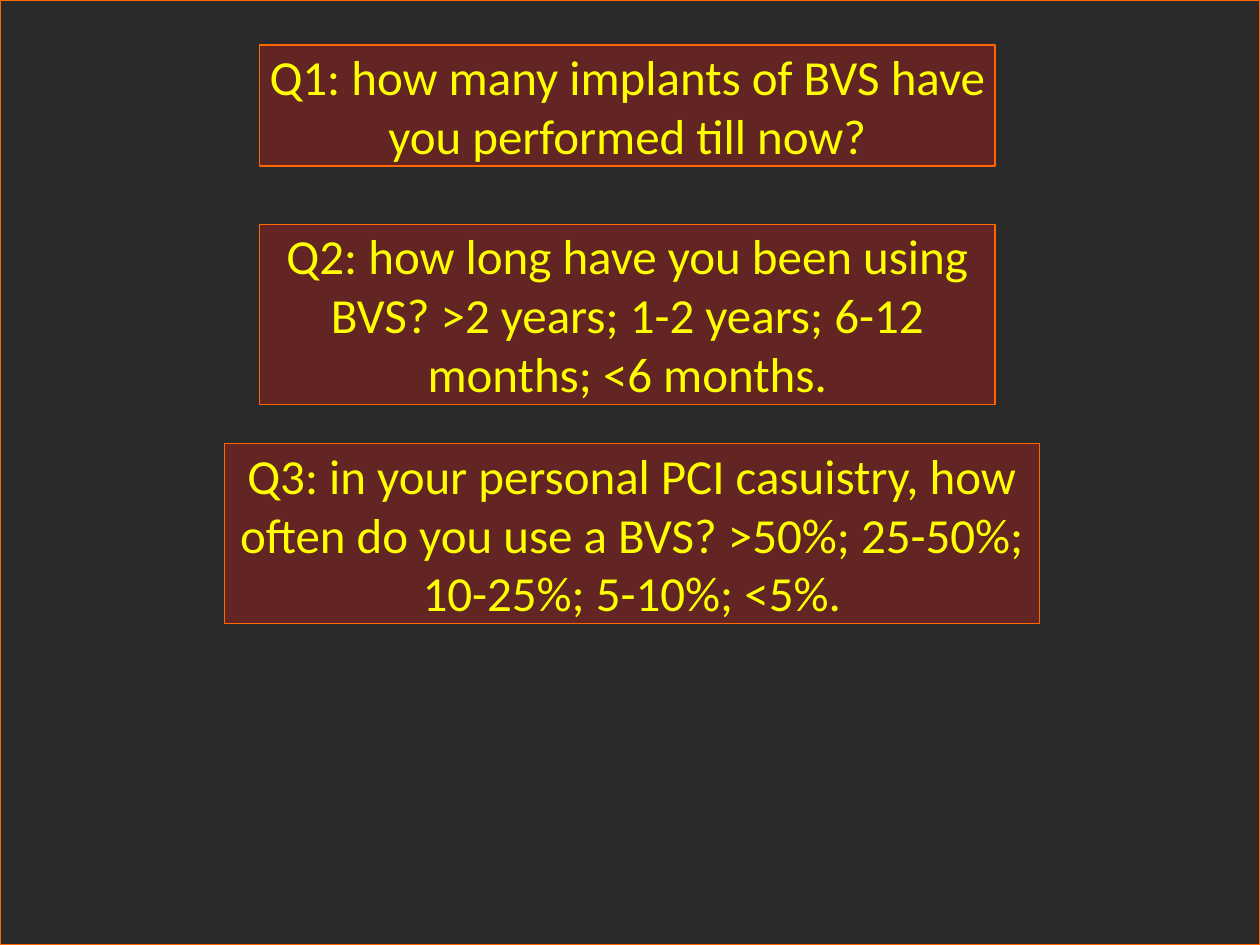
import pptx
import pptx.dml.color
import pptx.enum.shapes
import pptx.enum.text
import pptx.util
from lxml import etree
from pptx.util import Cm

QUESTIONS = [
    ("Q1: how many implants of BVS have you performed till now?",
     (5.23, 0.91, 14.83, 2.44)),
    ("Q2: how long have you been using BVS? >2 years; 1-2 years; 6-12 months; <6 months.",
     (5.23, 4.52, 14.83, 3.63)),
    ("Q3: in your personal PCI casuistry, how often do you use a BVS? "
     ">50%; 25-50%; 10-25%; 5-10%; <5%.",
     (4.52, 8.94, 16.43, 3.63)),
]
SLIDE_SIZE = (25.4, 19.05)
BACKDROP, OVERLAY, PANEL, BORDER, LETTERING = "404040", "262626", "632523", "FF6600", "FFFF00"
OVERLAY_ALPHA = 81
FRAME_FORMAT = {
    "margin_left": Cm(0.05),
    "margin_right": Cm(0.05),
    "margin_top": Cm(0.03),
    "margin_bottom": Cm(0.03),
    "word_wrap": True,
    "auto_size": pptx.enum.text.MSO_AUTO_SIZE.SHAPE_TO_FIT_TEXT,
    "vertical_anchor": pptx.enum.text.MSO_ANCHOR.MIDDLE,
}
FONT_FORMAT = {"name": "Calibri", "size": pptx.util.Pt(28)}


def paint(color_format, color):
    color_format.rgb = pptx.dml.color.RGBColor.from_string(color)


def apply_format(target, values):
    for attribute, value in values.items():
        setattr(target, attribute, value)


def add_panel(slide, box, color):
    panel = slide.shapes.add_shape(
        pptx.enum.shapes.MSO_SHAPE.RECTANGLE, *(Cm(length) for length in box))
    panel.shadow.inherit = False
    panel.fill.solid()
    paint(panel.fill.fore_color, color)
    paint(panel.line.color, BORDER)
    panel.line.width = pptx.util.Pt(0.75)
    return panel


def add_question(slide, wording, box):
    frame = add_panel(slide, box, PANEL).text_frame
    apply_format(frame, FRAME_FORMAT)
    paragraph = frame.paragraphs[0]
    paragraph.alignment = pptx.enum.text.PP_ALIGN.CENTER
    question = paragraph.add_run()
    question.text = wording
    apply_format(question.font, FONT_FORMAT)
    paint(question.font.color, LETTERING)


def main():
    deck = pptx.Presentation()
    deck.slide_width, deck.slide_height = (Cm(length) for length in SLIDE_SIZE)
    slide = deck.slides.add_slide(deck.slide_layouts[6])
    slide.background.fill.solid()
    paint(slide.background.fill.fore_color, BACKDROP)

    overlay = add_panel(slide, (0, 0, *SLIDE_SIZE), OVERLAY)
    tint = overlay.element.spPr.find(
        "./" + pptx.oxml.ns.qn("a:solidFill") + "/" + pptx.oxml.ns.qn("a:srgbClr"))
    etree.SubElement(tint, pptx.oxml.ns.qn("a:alpha"), val=str(OVERLAY_ALPHA * 1000))

    for wording, box in QUESTIONS:
        add_question(slide, wording, box)
    deck.save("out.pptx")


if __name__ == "__main__":
    main()
